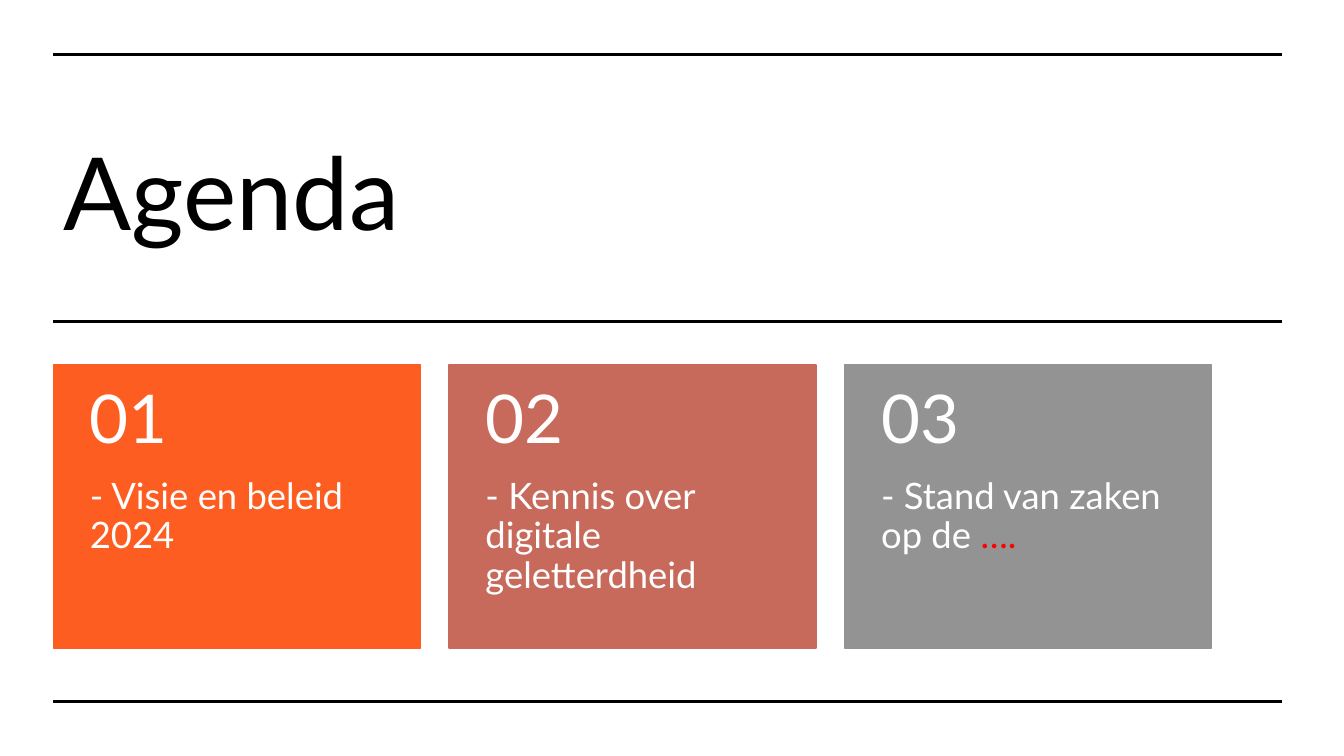
from lxml import etree
from pptx import Presentation
from pptx.dml.color import RGBColor
from pptx.enum import shapes, text
from pptx.oxml import ns
from pptx.util import Pt


def color(value):
    return RGBColor.from_string(value)


def add_text(area, insets, anchor, size, spacing, runs):
    box = page.shapes.add_textbox(*[Pt(length) for length in area])
    frame = box.text_frame
    frame.word_wrap = True
    frame.vertical_anchor = anchor
    frame.margin_left, frame.margin_top, frame.margin_right, frame.margin_bottom = [
        Pt(inset) for inset in insets
    ]
    para = frame.paragraphs[0]
    para.line_spacing = spacing
    for words, ink in runs:
        span = para.add_run()
        span.text = words
        span.font.name = "Lato"
        span.font.size = Pt(size)
        span.font.color.rgb = color(ink)


deck = Presentation()
deck.slide_width, deck.slide_height = Pt(960), Pt(540)
page = deck.slides.add_slide(deck.slide_layouts[6])

left, right = 38.2, 915.8
add_text((left, 77, 662.4, 117.4), (7.2, 3.6, 7.2, 3.6),
         text.MSO_ANCHOR.MIDDLE, 72, 1.0, [("Agenda", "000000")])

for y in (38.9, 229.7, 501.1):
    rule = page.shapes.add_connector(
        shapes.MSO_CONNECTOR.STRAIGHT, Pt(left), Pt(y), Pt(right), Pt(y))
    rule.line.color.rgb = color("000000")
    rule.line.width = Pt(2.25)
    etree.SubElement(rule._element.spPr, ns.qn("a:effectLst"))

card_top, card_width, card_height, card_step = 260.6, 262.1, 202.3, 282.6
number_height = 81
cards = [
    ("FE5D21", [("- Visie en beleid 2024", "FFFFFF")]),
    ("C86A5B", [("- Kennis over digitale geletterdheid", "FFFFFF")]),
    ("939393", [("- Stand van zaken op de", "FFFFFF"), (" ….", "FF0000")]),
]
for index, (fill, topic) in enumerate(cards):
    x = left + index * card_step
    card = page.shapes.add_shape(
        shapes.MSO_SHAPE.RECTANGLE, Pt(x), Pt(card_top), Pt(card_width), Pt(card_height))
    card.shadow.inherit = False
    card.fill.solid()
    card.fill.fore_color.rgb = color(fill)
    card.line.color.rgb = color(fill)
    card.line.width = Pt(1)
    add_text((x, card_top + number_height, card_width, card_height - number_height),
             (26, 0, 26, 26), text.MSO_ANCHOR.TOP, 26, 0.9, topic)
    add_text((x, card_top, card_width, number_height), (26, 13, 26, 13),
             text.MSO_ANCHOR.MIDDLE, 48, 0.9, [(f"{index + 1:02}", "FFFFFF")])

deck.save("out.pptx")
